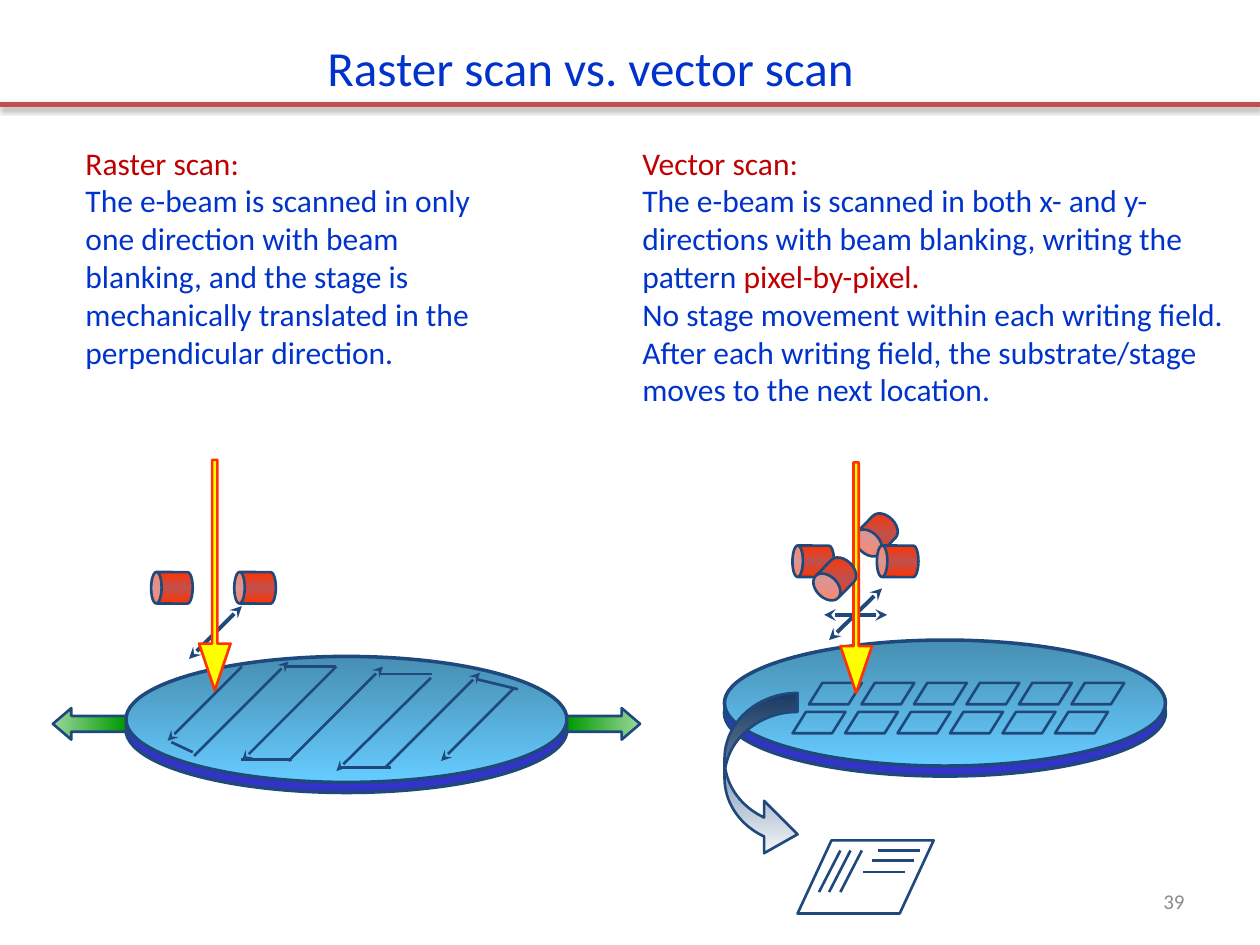
from copy import deepcopy
from dataclasses import dataclass
from typing import NamedTuple

from lxml.etree import SubElement
from pptx import Presentation
from pptx.dml.color import RGBColor
from pptx.enum.shapes import MSO_CONNECTOR, MSO_SHAPE as Preset
from pptx.enum.text import MSO_ANCHOR as Anchor, MSO_AUTO_SIZE as AutoSize, PP_ALIGN as Align
from pptx.oxml.ns import qn
from pptx.util import Inches, Pt


@dataclass(frozen=True)
class Theme:
    font: str = "Calibri"
    title_size: int = 28
    body_size: int = 18
    number_size: int = 12
    blue: str = "0033CC"
    red: str = "C00000"
    gray: str = "8C8C8C"
    navy: str = "1F497D"
    rule: str = "C0504D"
    beam: str = "FFFF00"
    beam_edge: str = "FF3300"
    wafer_side: str = "3333CC"
    wafer_top: tuple = ("478EB2", "66CCFF")
    coil: tuple = ("FF3300", "C0504D", "FF3300")
    stage: tuple = ("009900", "9BD79B")
    move: tuple = ("1F497D", "FFFFFF")


THEME = Theme()


class Box(NamedTuple):
    left: float
    top: float
    width: float
    height: float


class Line(NamedTuple):
    x1: float
    y1: float
    x2: float
    y2: float


class Coil(NamedTuple):
    left: float
    top: float
    height: float = 0.33
    rotation: float = 270.4
    depth: float = 0.333
    flip: str = ""


def color(value: str) -> RGBColor:
    return RGBColor.from_string(value)


def paint(shape, fill, angle: float) -> None:
    """Fill with nothing, one colour, or evenly spaced gradient stops."""
    if fill is None:
        shape.fill.background()
    elif isinstance(fill, str):
        shape.fill.solid()
        shape.fill.fore_color.rgb = color(fill)
    else:
        shape.fill.gradient()
        shape.fill.gradient_angle = -angle % 360
        stop_list = shape._element.spPr.find(".//" + qn("a:gsLst"))
        for _ in fill[2:]:
            stop_list.append(deepcopy(stop_list[0]))
        for index, (stop, value) in enumerate(zip(shape.fill.gradient_stops, fill)):
            stop.position = index / (len(fill) - 1)
            stop.color.rgb = color(value)


def add_shape(slide, preset, box: Box, fill=None, adjustments=(), angle: float = 90,
              edge: str = THEME.navy, weight: float = 1.5, rotation: float = 0, flip: str = ""):
    shape = slide.shapes.add_shape(preset, *map(Inches, box))
    shape.shadow.inherit = False
    shape.rotation = rotation
    for index, value in enumerate(adjustments):
        shape.adjustments[index] = value
    for axis in flip:
        shape._element.spPr.xfrm.set("flip" + axis, "1")
    paint(shape, fill, angle)
    shape.line.color.rgb = color(edge)
    shape.line.width = Pt(weight)
    return shape


def add_line(slide, line: Line, weight: float = 1.5, ends=(), edge: str = THEME.navy):
    """Draw a straight line; ends names the arrowheads. Returns its effect list."""
    connector = slide.shapes.add_connector(MSO_CONNECTOR.STRAIGHT, *map(Inches, line))
    connector.line.color.rgb = color(edge)
    connector.line.width = Pt(weight)
    properties = connector._element.spPr
    for end in ends:
        SubElement(properties.get_or_add_ln(), qn(f"a:{end}"), type="stealth")
    return SubElement(properties, qn("a:effectLst"))


def add_text(slide, box: Box, paragraphs, size: int, align=Align.LEFT, **frame_format) -> None:
    """Each paragraph is a list of (text, colour) runs."""
    frame = slide.shapes.add_textbox(*map(Inches, box)).text_frame
    for name, value in ({"word_wrap": True, "vertical_anchor": Anchor.MIDDLE} | frame_format).items():
        setattr(frame, name, value)
    for index, runs in enumerate(paragraphs):
        paragraph = frame.add_paragraph() if index else frame.paragraphs[0]
        paragraph.alignment = align
        for text, value in runs:
            for part, piece in enumerate(text.split("\n")):
                if part:
                    paragraph.add_line_break()
                run = paragraph.add_run()
                run.text = piece
                for name, setting in {"name": THEME.font, "size": Pt(size)}.items():
                    setattr(run.font, name, setting)
                run.font.color.rgb = color(value)


def add_wafer(slide, left: float, top: float) -> None:
    for offset, fill in ((0.08, THEME.wafer_side), (0, THEME.wafer_top)):
        add_shape(slide, Preset.OVAL, Box(left, top + offset, 3.5, 1), fill, weight=2)


def add_beam(slide, left: float, top: float) -> None:
    add_shape(slide, Preset.DOWN_ARROW, Box(left, top, 0.25, 1.83), THEME.beam,
              (0.167, 1.484), edge=THEME.beam_edge)


def add_coil(slide, coil: Coil) -> None:
    shape = add_shape(slide, Preset.CAN, Box(coil.left, coil.top, 0.25, coil.height), THEME.coil,
                      (coil.depth,), rotation=coil.rotation, flip=coil.flip)
    shape._element.spPr.find(qn("a:gradFill")).set("rotWithShape", "0")


def add_fields(slide, boxes) -> None:
    for box in boxes:
        add_shape(slide, Preset.PARALLELOGRAM, box, adjustments=(0.625,))


SCAN_AXES = [Line(6.54, 4.88, 7.04, 4.88), Line(7, 4.67, 6.58, 5.08), Line(1.92, 4.81, 1.5, 5.23)]
BACK_COIL = Coil(6.83, 4.07, 0.35, 224.5, 0.685)
FRONT_COILS = [Coil(1.9, 4.5), Coil(1.24, 4.5), Coil(7, 4.29), Coil(6.33, 4.29),
               Coil(6.5, 4.42, 0.35, 44.5, 0.685, "HV")]
SCAN_STROKES = [Line(1.92, 5.29, 1.33, 5.88), Line(1.54, 6, 2.29, 5.25), Line(2.67, 5.29, 1.92, 6.04),
                Line(2.29, 6.04, 3.04, 5.29), Line(3.42, 5.38, 2.67, 6.12),
                Line(3.06, 6.09, 3.81, 5.34), Line(4.08, 5.46, 3.5, 6.04)]
SCAN_TURNS = [Line(1.36, 5.89, 1.53, 5.97), Line(2.25, 5.29, 2.67, 5.29), Line(1.91, 6.03, 2.32, 6.03),
              Line(3.01, 5.35, 3.43, 5.35), Line(2.69, 6.09, 3.1, 6.09), Line(3.78, 5.39, 4.11, 5.47)]
FIELD_PITCH = 5 / 12
FIELDS = [Box(left + FIELD_PITCH * column, top, 0.42, 0.17)
          for left, top in ((6.42, 5.42), (6.29, 5.65)) for column in range(6)]
PATTERN_LINES = ([Line(x, 7.08, x + 0.17, 6.75) for x in (6.5, 6.58, 6.67)]
                 + [Line(x, y, x + 0.33, y) for x, y in ((6.97, 6.75), (6.92, 6.83), (6.85, 6.92))])
RASTER_TEXT = [
    [("Raster scan:", THEME.red)],
    [("The e-beam is scanned in only one direction with beam blanking, and the stage is\n"
      "mechanically translated in the perpendicular direction.", THEME.blue)]]
VECTOR_TEXT = [
    [("Vector scan:", THEME.red)],
    [("The e-beam is scanned in both x- and y-directions with beam blanking, writing the pattern ",
      THEME.blue), ("pixel-by-pixel.", THEME.red)],
    [("No stage movement within each writing field.", THEME.blue)],
    [("After each writing field, the substrate/stage moves to the next location.", THEME.blue)]]


def main() -> None:
    presentation = Presentation()
    presentation.slide_width, presentation.slide_height = Inches(10), Inches(7.5)
    slide = presentation.slides.add_slide(presentation.slide_layouts[6])

    # Scan directions, wafers and beams
    for line in SCAN_AXES:
        add_line(slide, line, 2.25, ("headEnd", "tailEnd"))
    add_coil(slide, BACK_COIL)
    add_wafer(slide, 1, 5.21)
    add_wafer(slide, 5.75, 5.08)
    add_beam(slide, 1.58, 3.65)
    for line in SCAN_STROKES:
        add_line(slide, line, ends=("tailEnd",))
    add_fields(slide, FIELDS[:1])
    add_beam(slide, 6.67, 3.67)
    for coil in FRONT_COILS:
        add_coil(slide, coil)
    for line in SCAN_TURNS:
        add_line(slide, line)

    # Enlarged writing field
    add_shape(slide, Preset.CURVED_RIGHT_ARROW, Box(5.75, 5.5, 0.58, 1.33), THEME.move, (0.26, 0.717, 0.458))
    add_shape(slide, Preset.PARALLELOGRAM, Box(6.33, 6.67, 1.08, 0.58), adjustments=(0.464,))
    for line in PATTERN_LINES:
        add_line(slide, line)

    # Stage movement
    for left, flip in ((4.5, ""), (0.42, "H")):
        add_shape(slide, Preset.RIGHT_ARROW, Box(left, 5.62, 0.58, 0.25), THEME.stage, (0.5, 0.583), 0, flip=flip)

    # Descriptions and remaining writing fields
    grow = {"auto_size": AutoSize.SHAPE_TO_FIT_TEXT}
    add_text(slide, Box(0.58, 1.08, 3.42, 1.92), RASTER_TEXT, THEME.body_size, **grow)
    add_text(slide, Box(5, 1.08, 4.83, 2.22), VECTOR_TEXT, THEME.body_size, **grow)
    add_fields(slide, FIELDS[1:])

    # Page number, title rule with its shadow, and title
    add_text(slide, Box(7.17, 6.95, 2.33, 0.4), [[("39", THEME.gray)]], THEME.number_size, Align.RIGHT)
    effects = add_line(slide, Line(0, 0.83, 10, 0.83), 3, edge=THEME.rule)
    shadow = SubElement(effects, qn("a:outerShdw"), blurRad=str(Pt(3.1)), dist=str(Pt(1.6)),
                        dir="5400000", rotWithShape="0")
    SubElement(SubElement(shadow, qn("a:srgbClr"), val="000000"), qn("a:alpha"), val="38000")
    add_text(slide, Box(2.5, 0.25, 4.48, 0.57), [[("Raster scan vs. vector scan", THEME.blue)]],
             THEME.title_size, word_wrap=False, vertical_anchor=Anchor.TOP, **grow)

    presentation.save("out.pptx")


if __name__ == "__main__":
    main()
